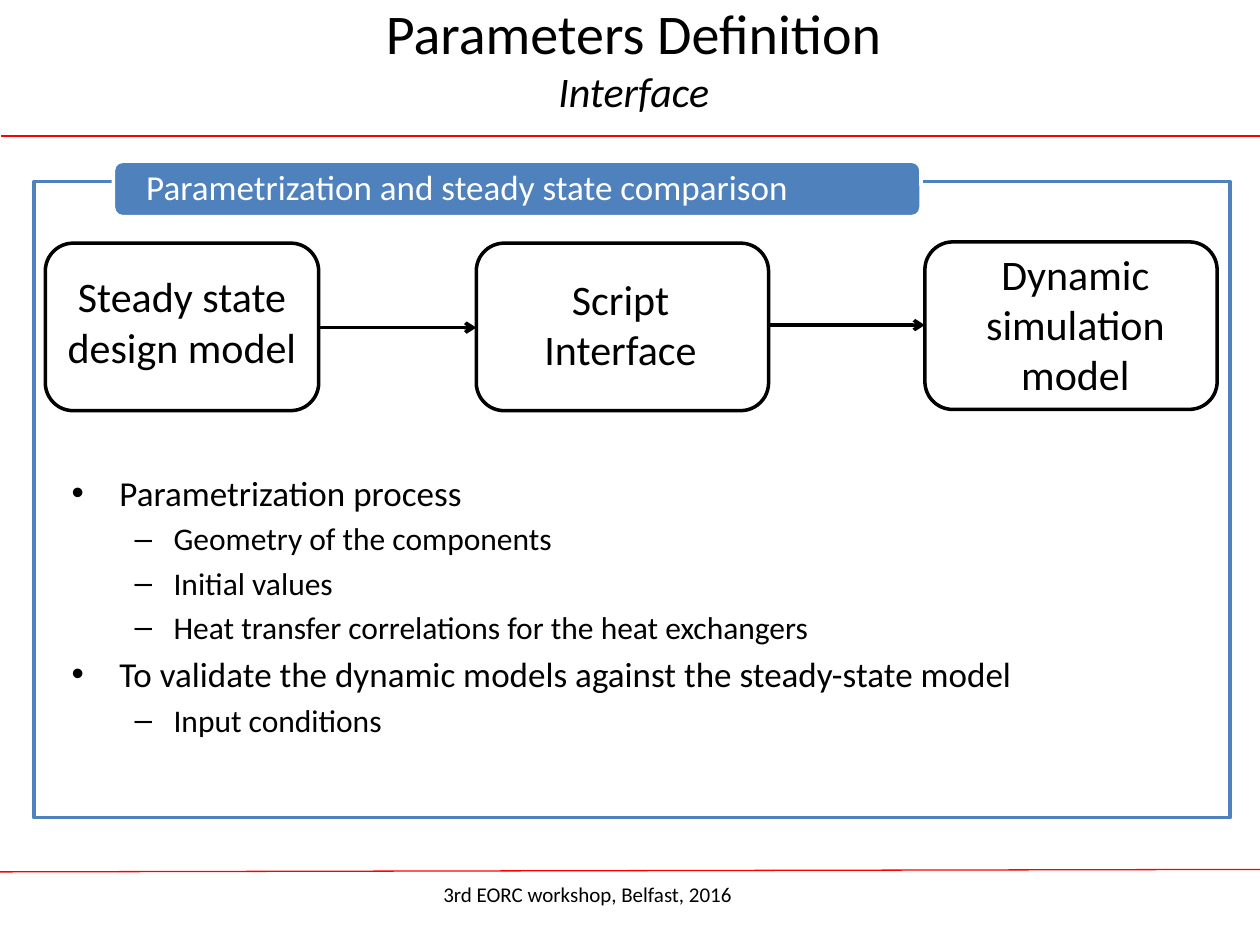
"""Build the slide on the parameter definition interface."""
from pptx import Presentation
from pptx import util as u
from pptx.dml.color import RGBColor
from pptx.enum import shapes, text
from pptx.oxml import parse_xml
from pptx.oxml.ns import nsdecls, qn
from lxml import etree

FONT, BLACK, WHITE, BLUE, RED = "Calibri", "000000", "FFFFFF", "4F81BD", "FF0000"
TITLE, SUBTITLE = "Parameters Definition", "Interface"
LABEL = "Parametrization and steady state comparison"
FOOTER = "3rd EORC workshop, Belfast, 2016"
RULES = [(0, 6.92, 10, 6.9), (0.01, 1.08, 10, 1.08)]
NODES = [
    ("Steady state design model", (0.36, 1.93, 2.17, 1.33), (0.36, 2.1, 2.17, 0.91)),
    ("Script Interface", (3.78, 1.93, 2.32, 1.33), (3.84, 2.12, 2.17, 0.91)),
    ("Dynamic simulation model", (7.34, 1.92, 2.32, 1.33), (7.45, 1.92, 2.17, 1.31)),
]
ARROW_HEIGHTS = [2.6, 2.58]
BULLETS = [
    (0, "Parametrization process"),
    (1, "Geometry of the components"),
    (1, "Initial values"),
    (1, "Heat transfer correlations for the heat exchangers"),
    (0, "To validate the dynamic models against the steady-state model"),
    (1, "Input conditions"),
]
LEVELS = [("•", 20, 0.38, 0.38), ("–", 18, 0.81, 0.31)]


def color(value):
    return RGBColor.from_string(value)


def inches(box):
    return [u.Inches(length) for length in box]


def style(run, size, value=BLACK, italic=False):
    run.font.name, run.font.size, run.font.italic = FONT, u.Pt(size), italic
    run.font.color.rgb = color(value)


def add_box(slide, kind, box, line, fill=None):
    shape = slide.shapes.add_shape(kind, *inches(box))
    shape.shadow.inherit = False
    if fill:
        shape.fill.solid()
        shape.fill.fore_color.rgb = color(fill)
    else:
        shape.fill.background()
    shape.line.color.rgb, shape.line.width = color(line), u.Pt(2)
    return shape


def add_line(slide, ends, value, width, arrow=False):
    line = slide.shapes.add_connector(shapes.MSO_CONNECTOR.STRAIGHT, *inches(ends))
    line.line.color.rgb, line.line.width = color(value), u.Pt(width)
    if arrow:
        line.line._get_or_add_ln().append(parse_xml(f'<a:tailEnd {nsdecls("a")} type="arrow"/>'))
    etree.SubElement(line._element.spPr, qn("a:effectLst"))


def add_text(slide, box, words, size, value=BLACK, align=text.PP_ALIGN.LEFT):
    frame = slide.shapes.add_textbox(*inches(box)).text_frame
    frame.word_wrap = True
    frame.text = words
    paragraph = frame.paragraphs[0]
    paragraph.alignment = align
    style(paragraph.runs[0], size, value)
    return frame


def add_title(slide):
    title = slide.shapes.title
    title.left, title.top, title.width, title.height = inches((1.43, 0.06, 7.2, 0.79))
    frame = title.text_frame
    frame.text = f"{TITLE}\v{SUBTITLE}"
    frame.vertical_anchor = text.MSO_ANCHOR.MIDDLE
    frame.auto_size = text.MSO_AUTO_SIZE.NONE
    paragraph = frame.paragraphs[0]
    paragraph.alignment = text.PP_ALIGN.CENTER
    style(paragraph.runs[0], 32)
    style(paragraph.runs[1], 24, italic=True)


def add_label(slide):
    add_box(slide, shapes.MSO_SHAPE.ROUNDED_RECTANGLE, (0.9, 1.28, 6.41, 0.44), WHITE, BLUE)
    frame = add_text(slide, (0.92, 1.3, 6.37, 0.4), LABEL, 20, WHITE)
    frame.vertical_anchor = text.MSO_ANCHOR.MIDDLE
    frame.margin_left = frame.margin_right = u.Inches(0.24)
    frame.margin_top = frame.margin_bottom = 0
    frame.paragraphs[0].line_spacing = 0.9


def add_bullets(slide):
    frame = slide.shapes.add_textbox(*inches((0.47, 1.86, 9, 5.37))).text_frame
    frame.word_wrap = True
    frame.margin_top = u.Inches(1.88)
    frame.text = "\n".join(words for _, words in BULLETS)
    for index, (paragraph, (level, _)) in enumerate(zip(frame.paragraphs, BULLETS)):
        mark, size, indent, hanging = LEVELS[level]
        paragraph.level = level
        paragraph.space_before = u.Pt(size * 0.2 if index else 0)
        style(paragraph.runs[0], size)
        properties = paragraph._p.get_or_add_pPr()
        properties.set("marL", str(u.Inches(indent)))
        properties.set("indent", str(-u.Inches(hanging)))
        etree.SubElement(properties, qn("a:buFont")).set("typeface", "Arial")
        etree.SubElement(properties, qn("a:buChar")).set("char", mark)


def add_flow(slide):
    for words, box, text_box in NODES:
        add_box(slide, shapes.MSO_SHAPE.ROUNDED_RECTANGLE, box, BLACK)
        add_text(slide, text_box, words, 24, align=text.PP_ALIGN.CENTER)
    for (_, start, _), (_, end, _), height in zip(NODES, NODES[1:], ARROW_HEIGHTS):
        add_line(slide, (start[0] + start[2], height, end[0], height), BLACK, 2, arrow=True)


def main():
    presentation = Presentation()
    presentation.slide_width, presentation.slide_height = inches((10, 7.5))
    slide = presentation.slides.add_slide(presentation.slide_layouts[5])
    for ends in RULES:
        add_line(slide, ends, RED, 0.75)
    frame = add_box(slide, shapes.MSO_SHAPE.RECTANGLE, (0.27, 1.44, 9.49, 5.05), BLUE, WHITE)
    fill = frame._element.spPr.find(qn("a:solidFill"))
    etree.SubElement(fill[0], qn("a:alpha")).set("val", "90000")
    add_label(slide)
    add_title(slide)
    add_bullets(slide)
    add_text(slide, (3.42, 6.95, 3.17, 0.4), FOOTER, 12)
    add_flow(slide)
    presentation.save("out.pptx")


if __name__ == "__main__":
    main()
